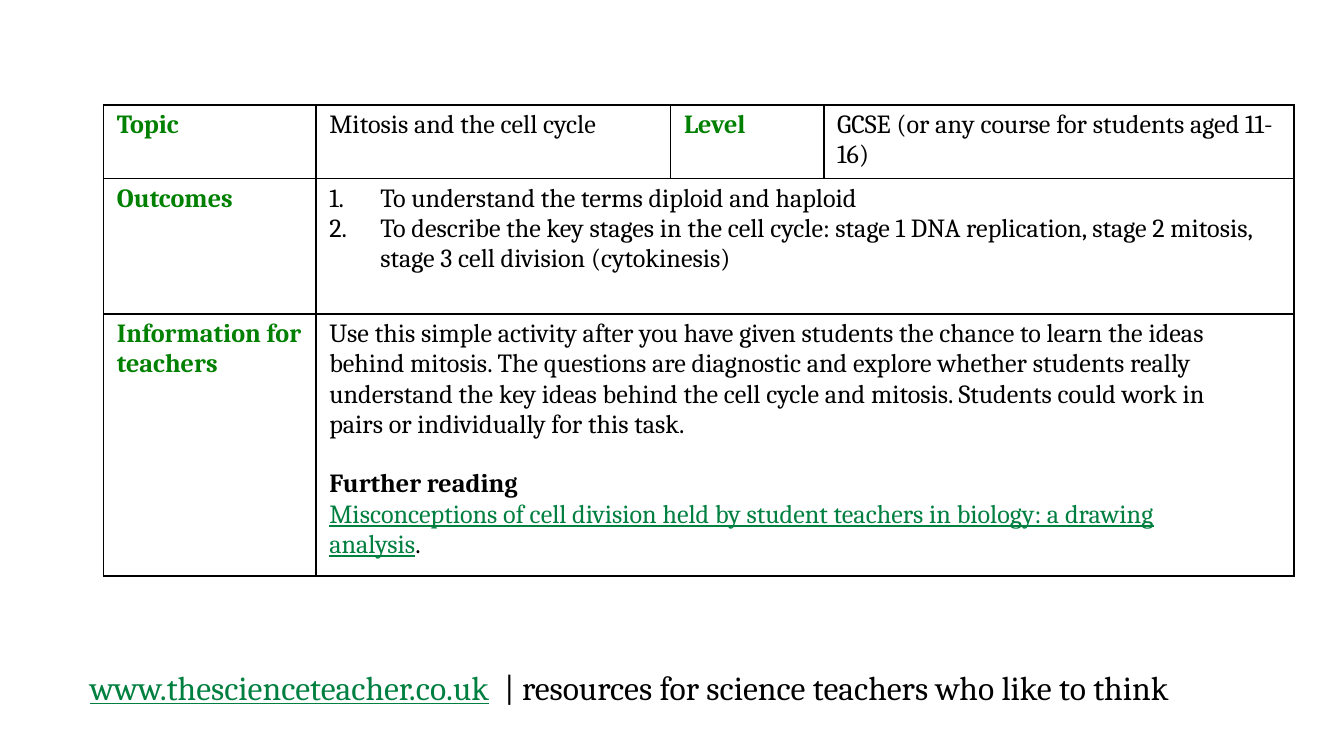
from dataclasses import dataclass

from lxml import etree
from pptx import Presentation
from pptx.dml.color import RGBColor
from pptx.oxml.ns import qn
from pptx.util import Inches, Pt


@dataclass(frozen=True)
class Theme:
    font: str = "Cambria"
    body: int = 14
    footer: int = 18
    text: str = "000000"
    label: str = "008000"
    link: str = "008040"
    border: str = "000000"


THEME = Theme()
SLIDE_W = 10
SLIDE_H = SLIDE_W * 9 / 16
TABLE_LEFT, TABLE_TOP = 0.77, 0.78
COLS = [1.58, 2.64, 1.14, 3.5]
ROWS = [0.53, 1.01, 1.95]
NUMBER_INDENT = 0.38
LINE_GAP = 16

OUTCOMES = [
    "To understand the terms diploid and haploid",
    "To describe the key stages in the cell cycle: stage 1 DNA replication, "
    "stage 2 mitosis, stage 3 cell division (cytokinesis)",
]
INFORMATION = [
    "Use this simple activity after you have given students the chance to learn the ideas",
    "behind mitosis. The questions are diagnostic and explore whether students really",
    "understand the key ideas behind the cell cycle and mitosis. Students could work in",
    "pairs or individually for this task.",
]
READING = [
    "Misconceptions of cell division held by student teachers in biology: a drawing",
    "analysis",
]


def add_run(p, text, color=THEME.text, size=THEME.body, bold=False, underline=False):
    r = p.add_run()
    r.text = text
    r.font.name = THEME.font
    r.font.size = Pt(size)
    r.font.bold = bold
    r.font.underline = underline
    r.font.color.rgb = RGBColor.from_string(color)


def add_link(p, text, size=THEME.body):
    add_run(p, text, THEME.link, size, underline=True)


def next_paragraph(tf):
    """Use the empty first paragraph, then add new ones."""
    first = tf.paragraphs[0]
    return tf.add_paragraph() if first.runs else first


def number_paragraph(p):
    pPr = p._p.get_or_add_pPr()
    pPr.set("marL", str(Inches(NUMBER_INDENT)))
    pPr.set("indent", str(-Inches(NUMBER_INDENT)))
    etree.SubElement(pPr, qn("a:buAutoNum"), type="arabicPeriod")


def format_cell(cell):
    """Clear the fill and draw a thin border on every side."""
    tcPr = cell._tc.get_or_add_tcPr()
    for side in ("L", "R", "T", "B"):
        ln = etree.SubElement(tcPr, qn(f"a:ln{side}"), w=str(Pt(1)))
        fill = etree.SubElement(ln, qn("a:solidFill"))
        etree.SubElement(fill, qn("a:srgbClr"), val=THEME.border)
    cell.fill.background()
    cell.margin_left = cell.margin_right = Inches(0.1)
    cell.margin_top = cell.margin_bottom = Inches(0.04)


def add_grid(s):
    """Four columns; below the first row the last three are merged."""
    table = s.shapes.add_table(
        len(ROWS), len(COLS), Inches(TABLE_LEFT), Inches(TABLE_TOP),
        Inches(sum(COLS)), Inches(sum(ROWS))).table
    table.first_row = table.horz_banding = False
    for col, width in zip(table.columns, COLS):
        col.width = Inches(width)
    for row, height in zip(table.rows, ROWS):
        row.height = Inches(height)
        for cell in row.cells:
            format_cell(cell)
    for i in range(1, len(ROWS)):
        table.cell(i, 1).merge(table.cell(i, len(COLS) - 1))
    return table


def fill_labels(table):
    labels = {(0, 0): "Topic", (0, 2): "Level", (1, 0): "Outcomes",
              (2, 0): "Information for teachers"}
    for (row, col), text in labels.items():
        p = table.cell(row, col).text_frame.paragraphs[0]
        add_run(p, text, THEME.label, bold=True)


def fill_details(table):
    # Topic and level
    details = {1: "Mitosis and the cell cycle",
               3: "GCSE (or any course for students aged 11-16)"}
    for col, text in details.items():
        add_run(table.cell(0, col).text_frame.paragraphs[0], text)

    # Numbered outcomes
    tf = table.cell(1, 1).text_frame
    for text in OUTCOMES:
        p = next_paragraph(tf)
        number_paragraph(p)
        add_run(p, text)

    # Information and further reading
    tf = table.cell(2, 1).text_frame
    for text in INFORMATION:
        add_run(next_paragraph(tf), text)
    p = next_paragraph(tf)
    p.space_before = Pt(LINE_GAP)
    add_run(p, "Further reading", bold=True)
    for text in READING:
        p = next_paragraph(tf)
        add_link(p, text)
    add_run(p, ".")


def add_footer(s):
    box = s.shapes.add_textbox(Inches(0.57), Inches(4.91), Inches(8.86), Inches(0.4))
    tf = box.text_frame
    tf.word_wrap = True
    p = tf.paragraphs[0]
    add_link(p, "www.thescienceteacher.co.uk", THEME.footer)
    add_run(p, "  | resources for science teachers who like to think", size=THEME.footer)


def main():
    prs = Presentation()
    prs.slide_width, prs.slide_height = Inches(SLIDE_W), Inches(SLIDE_H)
    s = prs.slides.add_slide(prs.slide_layouts[6])
    add_footer(s)
    table = add_grid(s)
    fill_labels(table)
    fill_details(table)
    prs.save("out.pptx")


if __name__ == "__main__":
    main()
